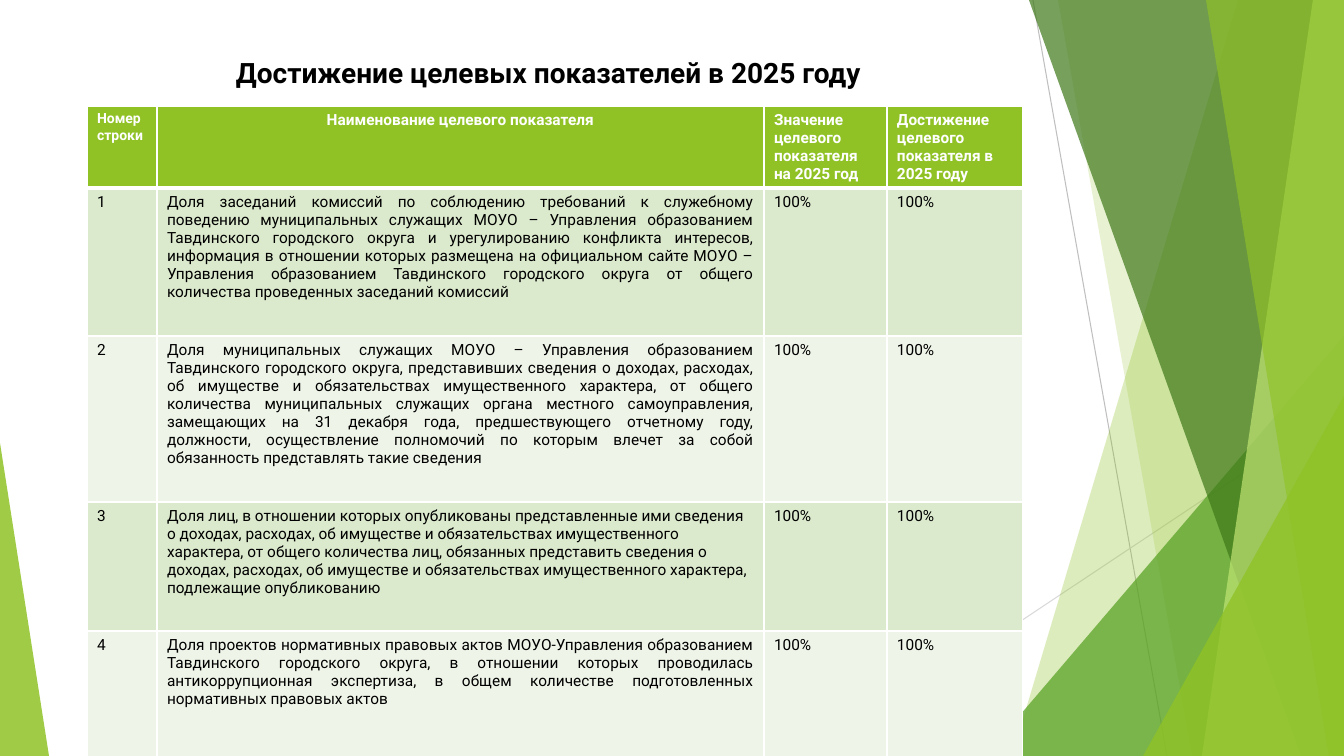
from lxml import etree
from pptx import Presentation
from pptx.dml.color import RGBColor
from pptx.enum.shapes import MSO_CONNECTOR, MSO_SHAPE
from pptx.enum.text import MSO_ANCHOR, MSO_AUTO_SIZE, PP_ALIGN
from pptx.oxml.ns import qn
from pptx.util import Pt

STRAIGHT = MSO_CONNECTOR.STRAIGHT
TRIANGLE = MSO_SHAPE.ISOSCELES_TRIANGLE
TOP = MSO_ANCHOR.TOP
NO_FIT = MSO_AUTO_SIZE.NONE
LEFT, CENTER, JUSTIFY = PP_ALIGN.LEFT, PP_ALIGN.CENTER, PP_ALIGN.JUSTIFY
PX = 914400 / 100.8
WIDTH, HEIGHT = 1344, 756
GREEN, WHITE, BLACK = "90C226", "FFFFFF", "000000"


def px(*lengths):
    return [round(length * PX) for length in lengths]


def color(value):
    return RGBColor.from_string(value)


deck = Presentation()
deck.slide_width, deck.slide_height = px(WIDTH, HEIGHT)
slide = deck.slides.add_slide(deck.slide_layouts[5])

rays = [
    (1033, 0, 1167, HEIGHT, "BFBFBF"),
    (WIDTH, 406, 818, HEIGHT, "D9D9D9"),
]
for *ends, tint in rays:
    ray = slide.shapes.add_connector(STRAIGHT, *px(*ends))
    ray.line.color.rgb = color(tint)
    ray.line.width = Pt(0.75)
    etree.SubElement(ray._element.spPr, qn("a:effectLst"))

facets = [
    ("band", (1238, 1012), GREEN, 30),
    ("band", (1058, 1192), GREEN, 20),
    ("corner", (985, 336, 359, 420, 1), "54A021", 72),
    ("band", (1029, 1301), "3F7819", 70),
    ("band", (1313, 1202), "C0E474", 70),
    ("band", (1206, 1329), GREEN, 65),
    ("corner", (1143, 396, 201, 360, 1), GREEN, 80),
    ("corner", (0, 443, 49, 313, 0), GREEN, 85),
]
for kind, place, tint, opacity in facets:
    if kind == "band":
        top_x, bottom_x = place
        outline = slide.shapes.build_freeform(top_x, 0, scale=PX)
        outline.add_line_segments([(WIDTH, 0), (WIDTH, HEIGHT), (bottom_x, HEIGHT)])
        facet = outline.convert_to_shape()
    else:
        *box, apex = place
        facet = slide.shapes.add_shape(TRIANGLE, *px(*box))
        facet.adjustments[0] = apex
    facet.shadow.inherit = False
    facet.line.fill.background()
    facet.fill.solid()
    facet.fill.fore_color.rgb = color(tint)
    srgb = facet._element.spPr.find(".//" + qn("a:srgbClr"))
    etree.SubElement(srgb, qn("a:alpha"), val=str(opacity * 1000))

heading = slide.shapes.title
heading.left, heading.top, heading.width, heading.height = px(75, 50, 947, 93)
heading_frame = heading.text_frame
for key, value in {"auto_size": NO_FIT, "vertical_anchor": TOP, "word_wrap": True}.items():
    setattr(heading_frame, key, value)
heading_frame.text = "Достижение целевых показателей в 2025 году"
heading_line = heading_frame.paragraphs[0]
heading_line.alignment = CENTER
for key, value in {"name": "Roboto", "size": Pt(20), "bold": True}.items():
    setattr(heading_line.font, key, value)
heading_line.font.color.rgb = color(BLACK)

headers = [
    "Номер строки",
    "Наименование целевого показателя",
    "Значение целевого показателя на 2025 год",
    "Достижение целевого показателя в 2025 году",
]
indicators = [
    "Доля заседаний комиссий по соблюдению требований к служебному поведению "
    "муниципальных служащих МОУО – Управления образованием Тавдинского городского "
    "округа и урегулированию конфликта интересов, информация в отношении которых "
    "размещена на официальном сайте МОУО – Управления образованием Тавдинского "
    "городского округа от общего количества проведенных заседаний комиссий",
    "Доля муниципальных служащих МОУО – Управления образованием Тавдинского "
    "городского округа, представивших сведения о доходах, расходах, об имуществе и "
    "обязательствах имущественного характера, от общего количества муниципальных "
    "служащих органа местного самоуправления, замещающих на 31 декабря года, "
    "предшествующего отчетному году, должности, осуществление полномочий по которым "
    "влечет за собой обязанность представлять такие сведения",
    "Доля лиц, в отношении которых опубликованы представленные ими сведения о "
    "доходах, расходах, об имуществе и обязательствах имущественного характера, от "
    "общего количества лиц, обязанных представить сведения о доходах, расходах, об "
    "имуществе и обязательствах имущественного характера, подлежащие опубликованию",
    "Доля проектов нормативных правовых актов МОУО-Управления образованием "
    "Тавдинского городского округа, в отношении которых проводилась "
    "антикоррупционная экспертиза, в общем количестве подготовленных нормативных "
    "правовых актов",
]
rows = [headers] + [
    [str(number), indicator, "100%", "100%"]
    for number, indicator in enumerate(indicators, 1)
]
column_widths = [70, 607, 123, 136]
row_heights = [81, 148, 166, 129, 158]
name_alignments = [CENTER, JUSTIFY, JUSTIFY, LEFT, JUSTIFY]

targets = slide.shapes.add_table(
    len(rows), len(headers), *px(87, 106, sum(column_widths), sum(row_heights))
).table
for column, width in zip(targets.columns, px(*column_widths)):
    column.width = width
for row, height in zip(targets.rows, px(*row_heights)):
    row.height = height

for r, texts in enumerate(rows):
    is_header = r == 0
    row_fill = GREEN if is_header else ("EEF4E8", "DBE9CD")[r % 2]
    for c, text in enumerate(texts):
        cell = targets.cell(r, c)
        properties = cell._tc.get_or_add_tcPr()
        for side in ("lnL", "lnR", "lnT", "lnB"):
            under_header = (r, side) in ((0, "lnB"), (1, "lnT"))
            width = Pt(3 if under_header else 1)
            border = etree.SubElement(properties, qn("a:" + side), w=str(width))
            paint = etree.SubElement(border, qn("a:solidFill"))
            etree.SubElement(paint, qn("a:srgbClr"), val=WHITE)
        cell.fill.solid()
        cell.fill.fore_color.rgb = color(row_fill)
        cell.text = text
        line = cell.text_frame.paragraphs[0]
        line.alignment = name_alignments[r] if c == 1 else LEFT
        size = Pt(10 if is_header and c == 0 else 11)
        for key, value in {"name": "Roboto", "size": size, "bold": is_header}.items():
            setattr(line.font, key, value)
        line.font.color.rgb = color(WHITE if is_header else BLACK)

deck.save("out.pptx")
